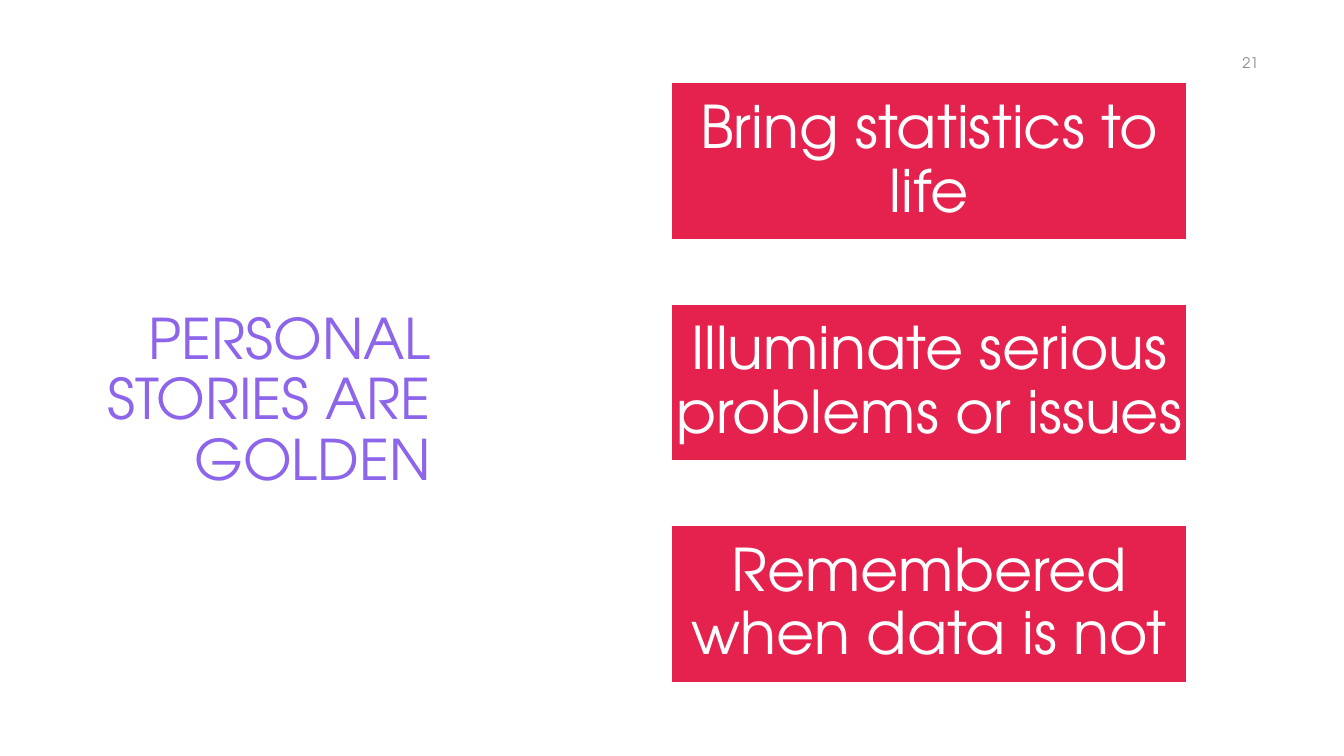
import pptx
import pptx.dml.color
import pptx.enum.shapes
import pptx.enum.text
import pptx.util
from pptx.util import Inches

TITLE = "PERSONAL STORIES ARE GOLDEN"
BENEFITS = [
    "Bring statistics to life",
    "Illuminate serious problems or issues",
    "Remembered when data is not",
]
PAGE_NUMBER = "21"

FONT = "TeX Gyre Adventor"
PURPLE, RED, WHITE, GRAY = "8D65EA", "E5224E", "FFFFFF", "8C8C8C"
CARD_LEFT, CARD_TOP, CARD_WIDTH, CARD_HEIGHT = 6.66, 0.82, 5.11, 1.56
CARD_STEP = 2.195
CARD_INSET = 0.03
ALIGN = pptx.enum.text.PP_ALIGN


def color(hex_code):
    return pptx.dml.color.RGBColor.from_string(hex_code)


def write(shape, text, size, hex_code, align, line_spacing=1.0):
    """Fill a shape with one vertically centred paragraph."""
    frame = shape.text_frame
    frame.word_wrap = True
    frame.vertical_anchor = pptx.enum.text.MSO_ANCHOR.MIDDLE
    paragraph = frame.paragraphs[0]
    paragraph.text = text
    paragraph.alignment = align
    paragraph.line_spacing = line_spacing
    paragraph.font.name = FONT
    paragraph.font.size = pptx.util.Pt(size)
    paragraph.font.color.rgb = color(hex_code)


def add_card(slide, text, top):
    card = slide.shapes.add_shape(
        pptx.enum.shapes.MSO_SHAPE.RECTANGLE,
        Inches(CARD_LEFT), Inches(top), Inches(CARD_WIDTH), Inches(CARD_HEIGHT))
    card.shadow.inherit = False
    card.fill.solid()
    card.fill.fore_color.rgb = color(RED)
    card.line.color.rgb = color(WHITE)
    card.line.width = pptx.util.Pt(1)
    frame = card.text_frame
    frame.margin_left = frame.margin_right = Inches(CARD_INSET)
    frame.margin_top = frame.margin_bottom = Inches(CARD_INSET)
    write(card, text, 42, WHITE, ALIGN.CENTER, 0.9)


def main():
    deck = pptx.Presentation()
    deck.slide_width, deck.slide_height = Inches(13.33), Inches(7.5)
    slide = deck.slides.add_slide(deck.slide_layouts[6])

    title = slide.shapes.add_textbox(
        Inches(0.75), Inches(1.17), Inches(3.62), Inches(5.63))
    write(title, TITLE, 40, PURPLE, ALIGN.RIGHT, 0.9)

    for row, benefit in enumerate(BENEFITS):
        add_card(slide, benefit, CARD_TOP + row * CARD_STEP)

    page_number = slide.shapes.add_textbox(
        Inches(9.58), Inches(0.42), Inches(3), Inches(0.4))
    write(page_number, PAGE_NUMBER, 10.5, GRAY, ALIGN.RIGHT)

    deck.save("out.pptx")


if __name__ == "__main__":
    main()
